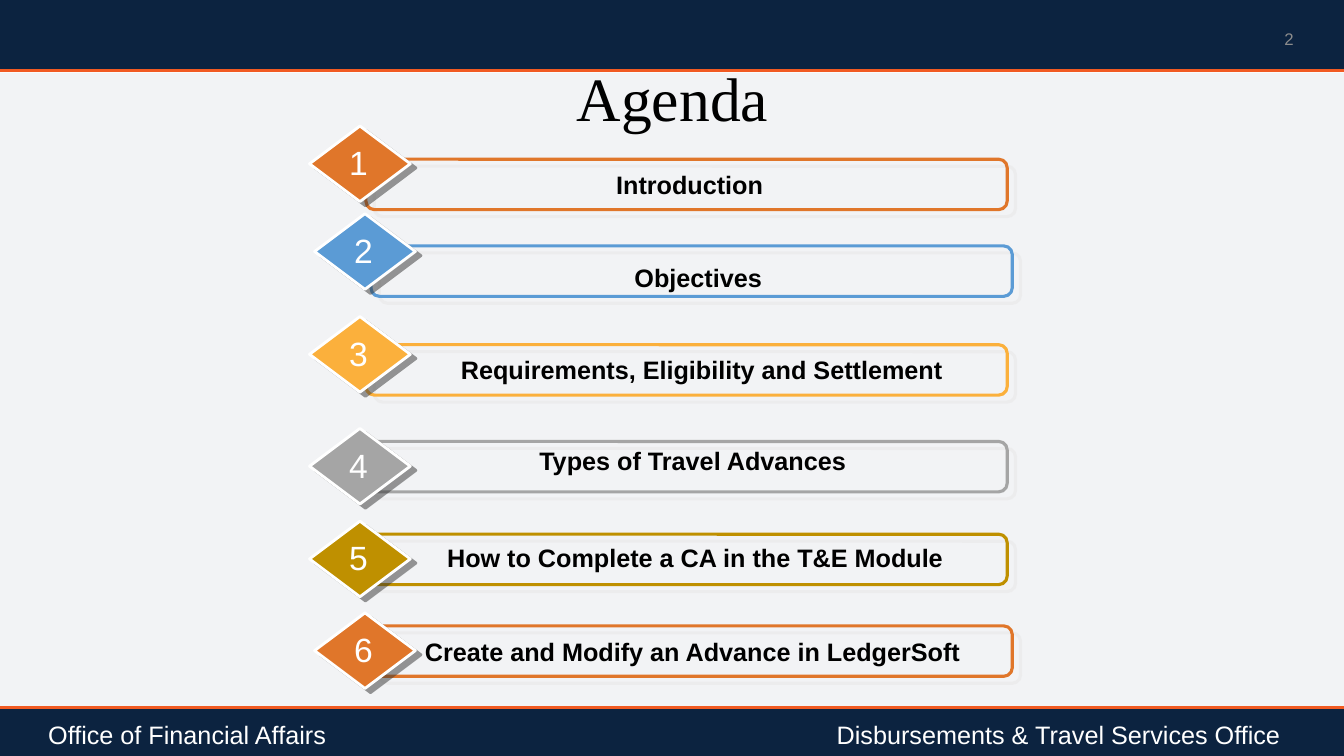
from lxml.etree import SubElement
from pptx import Presentation
from pptx.dml.color import RGBColor
from pptx.enum.shapes import MSO_CONNECTOR, MSO_SHAPE
from pptx.enum.text import MSO_ANCHOR, PP_ALIGN
from pptx.oxml.ns import qn
from pptx.util import Inches, Pt

NAVY, ORANGE, WHITE, BLACK = "0C2340", "F15A22", "FFFFFF", "000000"
TITLE, PAGE = "Agenda", "2"
FOOTER = "Office of Financial Affairs\tDisbursements & Travel Services Office"
WIDE, HIGH = 13.33, 7.5
BANDS = [(0.72, 6.29, 5), (7.03, 0.47, 100), (0, 0.69, 100)]  # top, height, opacity
RULES = [0.7, 7.02]

# label, colour, diamond left and top, bar top, label left, top and width
ITEMS = [
    ("Introduction", "E0762A", 3.07, 1.25, 1.58, 3.68, 1.63, 6.32),
    ("Objectives", "5B9BD5", 3.12, 2.12, 2.44, 3.83, 2.55, 6.19),
    ("Requirements, Eligibility and Settlement", "FBB03C",
     3.07, 3.14, 3.42, 4.17, 3.47, 5.58),
    ("Types of Travel Advances", "A5A5A5", 3.07, 4.25, 4.38, 3.75, 4.37, 6.24),
    ("How to Complete a CA in the T&E Module", "BF9000",
     3.07, 5.17, 5.3, 3.8, 5.33, 6.19),
    ("Create and Modify an Advance in LedgerSoft", "E0762A",
     3.12, 6.08, 6.21, 3.75, 6.26, 6.24),
]
BAR_W, BAR_H, GEM_W, GEM_H = 6.36, 0.5, 1, 0.75
BAR_DX = 0.56  # from diamond left to bar left

deck = Presentation()
deck.slide_width, deck.slide_height = Inches(WIDE), Inches(HIGH)
slide = deck.slides.add_slide(deck.slide_layouts[6])
shapes = slide.shapes


def rgb(code):
    return RGBColor.from_string(code)


def fade(node, percent):
    SubElement(node, qn("a:alpha"), val=str(percent * 1000))


def add_shape(kind, left, top, width, height, fill=None, line=None, weight=2):
    shape = shapes.add_shape(kind, *map(Inches, (left, top, width, height)))
    shape.shadow.inherit = False
    if fill:
        shape.fill.solid()
        shape.fill.fore_color.rgb = rgb(fill)
    else:
        shape.fill.background()
    if line:
        shape.line.color.rgb = rgb(line)
        shape.line.width = Pt(weight)
    else:
        shape.line.fill.background()
    return shape


def cast(shape, color, dist, angle):
    """Give the shape a hard, half-transparent shadow."""
    effects = shape._element.spPr.find(qn("a:effectLst"))
    shade = SubElement(effects, qn("a:outerShdw"), blurRad="0",
                       dist=str(Pt(dist)), dir=str(angle * 60000),
                       algn="ctr", rotWithShape="0")
    fade(SubElement(shade, qn("a:srgbClr"), val=color), 50)


def add_text(words, left, top, width, height, size, color=BLACK, bold=False,
             align=PP_ALIGN.CENTER, font="Arial", anchor=MSO_ANCHOR.TOP,
             wrap=True, tab=None):
    box = shapes.add_textbox(*map(Inches, (left, top, width, height)))
    frame = box.text_frame
    frame.word_wrap, frame.vertical_anchor = wrap, anchor
    para = frame.paragraphs[0]
    para.text, para.alignment = words, align
    if tab:
        stops = SubElement(para._p.get_or_add_pPr(), qn("a:tabLst"))
        SubElement(stops, qn("a:tab"), pos=str(Inches(tab)), algn="r")
    para.font.name, para.font.size, para.font.bold = font, Pt(size), bold
    para.font.color.rgb = rgb(color)
    return para


for top, height, opacity in BANDS:
    band = add_shape(MSO_SHAPE.RECTANGLE, 0, top, WIDE, height, NAVY)
    if opacity < 100:
        fade(band._element.spPr.find(qn("a:solidFill"))[0], opacity)

for top in RULES:
    rule = shapes.add_connector(MSO_CONNECTOR.STRAIGHT, 0, Inches(top),
                                Inches(WIDE), Inches(top))
    rule.line.color.rgb, rule.line.width = rgb(ORANGE), Pt(2)
    SubElement(rule._element.spPr, qn("a:effectLst"))

title = add_text(TITLE, 2.17, 0.67, 9, 0.67, 44, font="Times New Roman",
                 anchor=MSO_ANCHOR.MIDDLE)
title.line_spacing = 0.9
add_text(PAGE, 9.93, 0.19, 3, 0.4, 12, "8C8C8C", align=PP_ALIGN.RIGHT,
         anchor=MSO_ANCHOR.MIDDLE)

for number, item in enumerate(ITEMS, 1):
    label, color, left, top, bar_top, text_left, text_top, text_w = item
    bar = add_shape(MSO_SHAPE.ROUNDED_RECTANGLE, left + BAR_DX, bar_top,
                    BAR_W, BAR_H, line=color, weight=2.25)
    cast(bar, "E7E6E6", 7.8, 40)
    gem = add_shape(MSO_SHAPE.DIAMOND, left, top, GEM_W, GEM_H, color, WHITE)
    cast(gem, "333333", 5, 37)
    add_text(str(number), left + 0.29, top + 0.11, 0.39, 0.51, 24, WHITE,
             wrap=False)
    add_text(label, text_left, text_top, text_w, 0.4, 18, bold=True)

add_text(FOOTER, 0.38, 7.09, 12.57, 0.41, 18, WHITE, align=PP_ALIGN.LEFT,
         tab=12.22)

deck.save("out.pptx")
